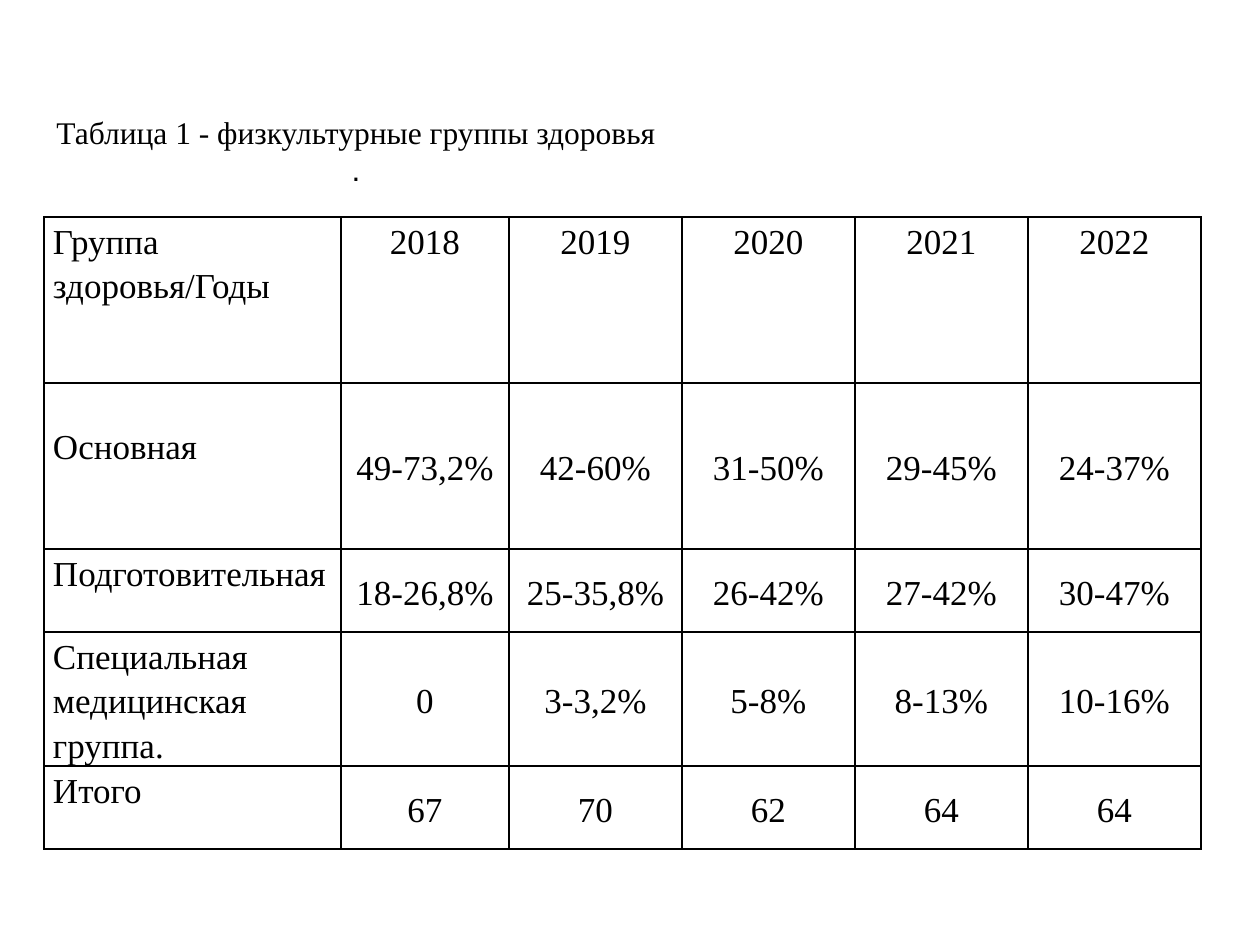
import pptx
import pptx.dml.color
import pptx.enum.text
import pptx.oxml
import pptx.oxml.ns
import pptx.util

PIXELS_PER_INCH = 126
COLORS = {"text": "000000", "border": "000000"}
ALIGN = pptx.enum.text.PP_ALIGN
ANCHOR = pptx.enum.text.MSO_ANCHOR

COLUMN_WIDTHS = [297, 168] + [173] * 4
ROW_HEIGHTS = [166, 166, 83, 134, 83]
SIDE_MARGIN = 9
LOWERED_LABEL_MARGIN = 39
ROWS = [
    ["Группа\nздоровья/Годы", "2018", "2019", "2020", "2021", "2022"],
    ["Основная", "49-73,2%", "42-60%", "31-50%", "29-45%", "24-37%"],
    ["Подготовительная", "18-26,8%", "25-35,8%", "26-42%", "27-42%", "30-47%"],
    ["Специальная медицинская группа.", "0", "3-3,2%", "5-8%", "8-13%", "10-16%"],
    ["Итого", "67", "70", "62", "64", "64"],
]


def px(value):
    return pptx.util.Emu(round(value * 914400 / PIXELS_PER_INCH))


def set_attributes(target, values):
    for name, value in values.items():
        setattr(target, name, value)


def style_paragraph(paragraph, font_name, size, **formats):
    set_attributes(paragraph, formats)
    for run in paragraph.runs:
        set_attributes(run.font, {"name": font_name, "size": pptx.util.Pt(size)})
        run.font.color.rgb = pptx.dml.color.RGBColor.from_string(COLORS["text"])


def add_borders(cell):
    properties = cell._tc.get_or_add_tcPr()
    for side in ("lnL", "lnR", "lnT", "lnB"):
        properties.append(pptx.oxml.parse_xml(
            f'<a:{side} {pptx.oxml.ns.nsdecls("a")} w="{pptx.util.Pt(1)}">'
            f'<a:solidFill><a:srgbClr val="{COLORS["border"]}"/></a:solidFill>'
            f'</a:{side}>'
        ))


def fill_cell(cell, text, is_header, is_label, top_margin):
    cell.text = text
    set_attributes(cell, {
        "margin_left": px(SIDE_MARGIN),
        "margin_right": px(SIDE_MARGIN),
        "margin_top": px(top_margin),
        "margin_bottom": 0,
        "vertical_anchor": ANCHOR.TOP if is_header or is_label else ANCHOR.MIDDLE,
    })
    add_borders(cell)
    cell.fill.background()
    for paragraph in cell.text_frame.paragraphs:
        style_paragraph(
            paragraph, "Times New Roman", 20, line_spacing=1.15,
            alignment=ALIGN.LEFT if is_label else ALIGN.CENTER,
        )


def add_health_table(slide):
    shape = slide.shapes.add_table(
        len(ROWS), len(COLUMN_WIDTHS), px(44), px(217),
        px(sum(COLUMN_WIDTHS)), px(sum(ROW_HEIGHTS)),
    )
    table = shape.table
    set_attributes(table, {"first_row": False, "horz_banding": False})
    for column, width in zip(table.columns, COLUMN_WIDTHS):
        column.width = px(width)
    for row, height in zip(table.rows, ROW_HEIGHTS):
        row.height = px(height)
    for row_index, texts in enumerate(ROWS):
        for column_index, text in enumerate(texts):
            lowered = row_index == 1 and column_index == 0
            fill_cell(
                table.cell(row_index, column_index), text,
                row_index == 0, column_index == 0,
                LOWERED_LABEL_MARGIN if lowered else 0,
            )


def add_caption(slide):
    shape = slide.shapes.add_textbox(px(44), px(106), px(630), px(89))
    frame = shape.text_frame
    set_attributes(frame, {
        "text": "Таблица 1 - физкультурные группы здоровья\n.",
        "word_wrap": False,
        "auto_size": pptx.enum.text.MSO_AUTO_SIZE.SHAPE_TO_FIT_TEXT,
        "vertical_anchor": ANCHOR.MIDDLE,
    })
    title, dot = frame.paragraphs
    style_paragraph(title, "Times New Roman", 18, alignment=ALIGN.LEFT)
    style_paragraph(dot, "Arial", 18, alignment=ALIGN.CENTER)


def main():
    presentation = pptx.Presentation()
    set_attributes(presentation, {"slide_width": px(1260), "slide_height": px(945)})
    slide = presentation.slides.add_slide(presentation.slide_layouts[6])
    add_health_table(slide)
    add_caption(slide)
    presentation.save("out.pptx")


if __name__ == "__main__":
    main()
